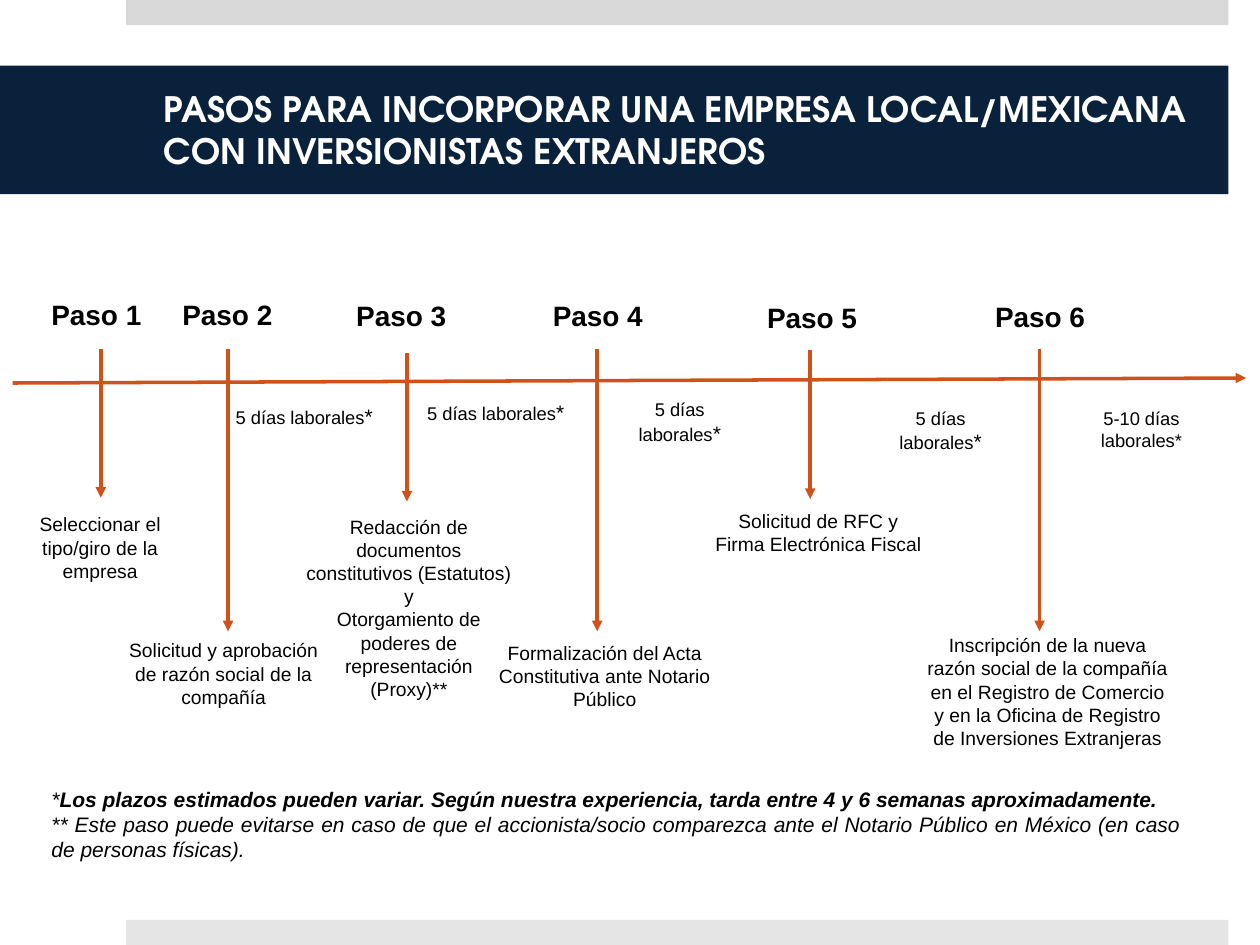
from pptx import Presentation
from pptx.dml.color import RGBColor
from pptx.enum.shapes import MSO_CONNECTOR, MSO_SHAPE
from pptx.enum.text import MSO_ANCHOR, PP_ALIGN
from pptx.oxml.ns import qn
from pptx.util import Inches, Pt
from lxml import etree

NAVY = RGBColor(0x09, 0x21, 0x3B)
ORANGE = RGBColor(0xD0, 0x51, 0x1A)
TOP_GREY = RGBColor(0xD9, 0xD9, 0xD9)
BOTTOM_GREY = RGBColor(0xE5, 0xE5, 0xE5)
WHITE = RGBColor(0xFF, 0xFF, 0xFF)
BLACK = RGBColor(0, 0, 0)


def add_text(box, paragraphs, align, italic=False):
    """Each paragraph is a list of (text, size, bold) runs."""
    tf = s.shapes.add_textbox(*map(Inches, box)).text_frame
    tf.word_wrap = True
    for i, runs in enumerate(paragraphs):
        p = tf.paragraphs[0] if i == 0 else tf.add_paragraph()
        p.alignment = align
        for text, size, bold in runs:
            r = p.add_run()
            r.text = text
            r.font.name = "Arial"
            r.font.size = Pt(size)
            r.font.bold = bold
            r.font.italic = italic
            r.font.color.rgb = BLACK


def add_arrow(x1, y1, x2, y2):
    line = s.shapes.add_connector(MSO_CONNECTOR.STRAIGHT, *map(Inches, (x1, y1, x2, y2)))
    line.line.color.rgb = ORANGE
    line.line.width = Pt(2)
    etree.SubElement(line.line._get_or_add_ln(), qn("a:tailEnd"), type="triangle")
    etree.SubElement(line._element.spPr, qn("a:effectLst"))


prs = Presentation()
prs.slide_width, prs.slide_height = Inches(10), Inches(7.5)
s = prs.slides.add_slide(prs.slide_layouts[6])

# Grey edge bars and title band
for box, color in [
    ((1, 0, 8.75, 0.2), TOP_GREY),
    ((1, 7.3, 8.75, 0.2), BOTTOM_GREY),
    ((0, 0.52, 9.75, 1.02), NAVY),
]:
    sp = s.shapes.add_shape(MSO_SHAPE.RECTANGLE, *map(Inches, box))
    sp.shadow.inherit = False
    sp.fill.solid()
    sp.fill.fore_color.rgb = color
    sp.line.fill.background()

# Title text, in the band drawn last
tf = sp.text_frame
tf.text = "PASOS PARA INCORPORAR UNA EMPRESA LOCAL/MEXICANA CON INVERSIONISTAS EXTRANJEROS"
tf.word_wrap = True
tf.vertical_anchor = MSO_ANCHOR.MIDDLE
tf.margin_left, tf.margin_right = Inches(1.3), Inches(0.3)
p = tf.paragraphs[0]
p.alignment = PP_ALIGN.LEFT
p.font.name = "TeX Gyre Adventor"
p.font.size = Pt(20)
p.font.bold = True
p.font.color.rgb = WHITE

# Timeline
add_arrow(0.1, 3.04, 9.89, 3)

# Steps: heading box, arrow x, top and bottom, description box and paragraphs
steps = [
    ((0.17, 2.31, 1.05, 0.37), (0.8, 2.77, 3.95), (0.02, 4.02, 1.55, 0.67),
     ["Seleccionar el tipo/giro de la empresa"]),
    ((1.18, 2.31, 1.08, 0.37), (1.81, 2.77, 5.01), (0.85, 5.02, 1.85, 0.66),
     ["Solicitud y aprobación de razón social de la compañía"]),
    ((2.67, 2.32, 0.97, 0.37), (3.23, 2.8, 3.98), (2.32, 4.04, 1.85, 1.58),
     ["Redacción de documentos constitutivos (Estatutos)", "y",
      "Otorgamiento de poderes de representación (Proxy)**"]),
    ((4.12, 2.32, 1.08, 0.37), (4.74, 2.77, 5.01), (3.77, 5.04, 2.06, 0.66),
     ["Formalización del Acta Constitutiva ante Notario Público"]),
    ((5.82, 2.34, 1.08, 0.37), (6.43, 2.78, 3.96), (5.57, 3.99, 1.85, 0.47),
     ["Solicitud de RFC y Firma Electrónica Fiscal"]),
    ((7.63, 2.33, 1.08, 0.37), (8.25, 2.77, 5.01), (7.24, 4.98, 2.15, 1.03),
     ["Inscripción de la nueva razón social de la compañía en el Registro de "
      "Comercio y en la Oficina de Registro de Inversiones Extranjeras"]),
]
for number, (heading, (x, top, bottom), box, lines) in enumerate(steps, start=1):
    add_text(heading, [[(f"Paso {number}", 16, True)]], PP_ALIGN.RIGHT)
    add_arrow(x, top, x, bottom)
    add_text(box, [[(text, 11, False)] for text in lines], PP_ALIGN.CENTER)

# Durations between steps
for box, days, star_size in [
    ((1.49, 3.15, 1.85, 0.5), "5 días", 12),
    ((3.01, 3.12, 1.85, 0.5), "5 días", 12),
    ((4.77, 3.11, 1.25, 0.68), "5 días", 12),
    ((6.84, 3.18, 1.25, 0.68), "5 días", 12),
    ((8.38, 3.18, 1.36, 0.45), "5-10 días", 10.5),
]:
    runs = [(f"{days} laborales", 10.5, False), ("*", star_size, False)]
    add_text(box, [runs], PP_ALIGN.CENTER)

# Footnotes
add_text((0.31, 6.19, 9.17, 0.71), [
    [("*", 12, False),
     ("Los plazos estimados pueden variar. Según nuestra experiencia, tarda entre "
      "4 y 6 semanas aproximadamente.", 12, True)],
    [("** Este paso puede evitarse en caso de que el accionista/socio comparezca ante "
      "el Notario Público en México (en caso de personas físicas).", 12, False)],
], PP_ALIGN.JUSTIFY, italic=True)

prs.save("out.pptx")
